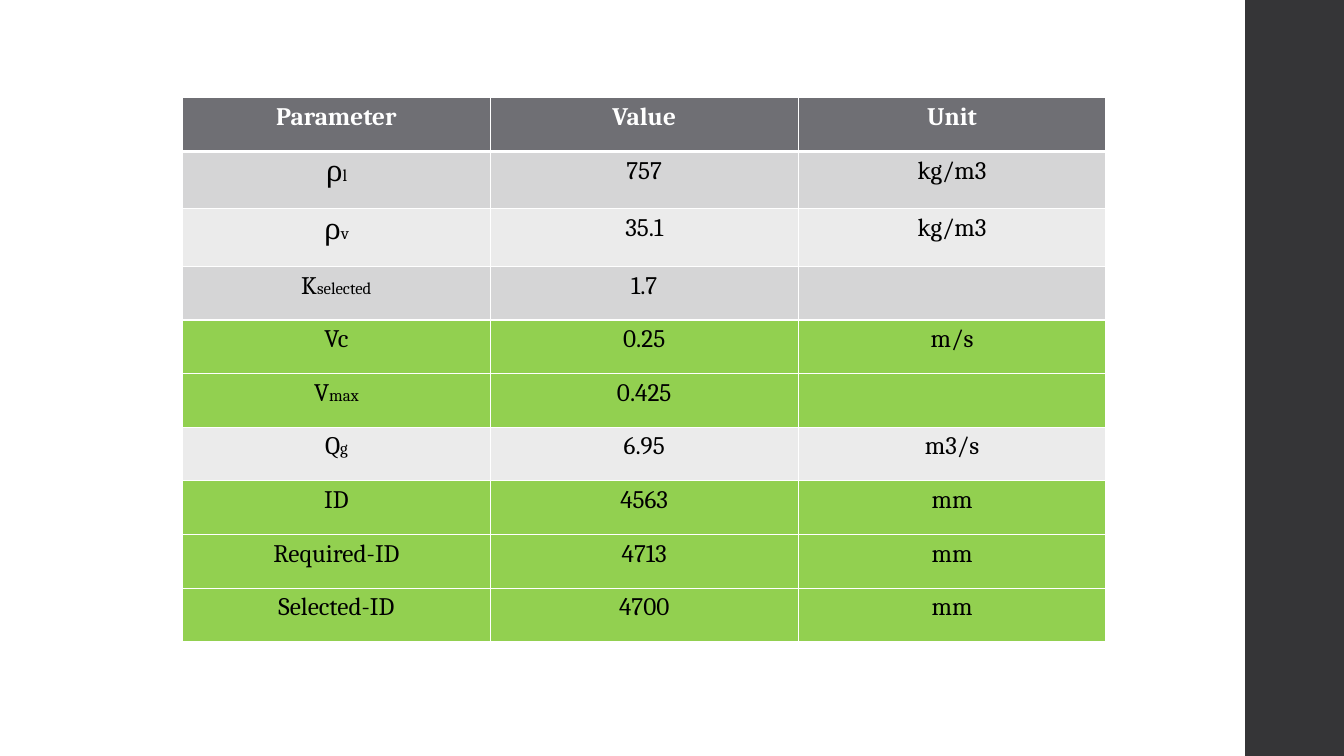
from lxml.etree import SubElement
from pptx import Presentation
from pptx.dml.color import RGBColor
from pptx.enum.shapes import MSO_SHAPE as Shape
from pptx.enum.text import PP_ALIGN as Align
from pptx.oxml.ns import qn
from pptx.util import Inches, Pt

WHITE = RGBColor(0xFF, 0xFF, 0xFF)
BLACK = RGBColor(0x00, 0x00, 0x00)
SIDEBAR = RGBColor(0x35, 0x35, 0x37)
HEADER = RGBColor(0x6F, 0x6F, 0x74)
BAND_DARK = RGBColor(0xD5, 0xD5, 0xD6)
BAND_LIGHT = RGBColor(0xEB, 0xEB, 0xEB)
GREEN = RGBColor(0x92, 0xD0, 0x50)

FONT = "Cambria"
TABLE_WIDTH, TABLE_HEIGHT = 9.16, 5.4
RHO_HEIGHT = 0.57

# Symbol, subscript, value, unit, fill
PARAMETERS = [
    ("ρ", "l", "757", "kg/m3", BAND_DARK),
    ("ρ", "v", "35.1", "kg/m3", BAND_LIGHT),
    ("K", "selected", "1.7", "", BAND_DARK),
    ("Vc", "", "0.25", "m/s", GREEN),
    ("V", "max", "0.425", "", GREEN),
    ("Q", "g", "6.95", "m3/s", BAND_LIGHT),
    ("ID", "", "4563", "mm", GREEN),
    ("Required-ID", "", "4713", "mm", GREEN),
    ("Selected-ID", "", "4700", "mm", GREEN),
]


def add_text(paragraph, text, size=18, color=BLACK, bold=False):
    paragraph.alignment = Align.CENTER
    if not text:
        return
    run = paragraph.add_run()
    run.text = text
    run.font.name = FONT
    run.font.size = Pt(size)
    run.font.bold = bold
    run.font.color.rgb = color


def style_cell(cell, fill, bottom=1, top=1):
    # Borders come before the fill in the cell properties
    properties = cell._tc.get_or_add_tcPr()
    for side, width in (("L", 1), ("R", 1), ("T", top), ("B", bottom)):
        border = SubElement(properties, qn(f"a:ln{side}"), w=str(Pt(width)))
        solid = SubElement(border, qn("a:solidFill"))
        SubElement(solid, qn("a:srgbClr"), val=str(WHITE))
    cell.fill.solid()
    cell.fill.fore_color.rgb = fill


def add_sidebar(slide):
    sidebar = slide.shapes.add_shape(
        Shape.RECTANGLE, Inches(12.35), 0, Inches(1), Inches(7.5))
    sidebar.shadow.inherit = False
    sidebar.fill.solid()
    sidebar.fill.fore_color.rgb = SIDEBAR
    sidebar.line.fill.background()


def add_parameter_table(slide):
    table = slide.shapes.add_table(
        len(PARAMETERS) + 1, 3, Inches(1.81), Inches(0.97),
        Inches(TABLE_WIDTH), Inches(TABLE_HEIGHT)).table
    for column in table.columns:
        column.width = Inches(TABLE_WIDTH / 3)

    # The rows with the larger ρ are taller; the others share the rest
    rho_rows = [i for i, row in enumerate(PARAMETERS, 1) if row[0] == "ρ"]
    plain_height = ((TABLE_HEIGHT - RHO_HEIGHT * len(rho_rows))
                    / (len(table.rows) - len(rho_rows)))
    for i, row in enumerate(table.rows):
        row.height = Inches(RHO_HEIGHT if i in rho_rows else plain_height)

    # Header
    for col, heading in enumerate(("Parameter", "Value", "Unit")):
        cell = table.cell(0, col)
        style_cell(cell, HEADER, bottom=3)
        add_text(cell.text_frame.paragraphs[0], heading, color=WHITE, bold=True)

    # Parameters
    for i, (symbol, subscript, value, unit, fill) in enumerate(PARAMETERS, 1):
        for col, text in enumerate((symbol, value, unit)):
            cell = table.cell(i, col)
            style_cell(cell, fill, top=3 if i == 1 else 1)
            paragraph = cell.text_frame.paragraphs[0]
            add_text(paragraph, text, size=20 if text == "ρ" else 18)
            if col == 0:
                add_text(paragraph, subscript, size=12)


def main():
    deck = Presentation()
    deck.slide_width = Inches(13.33)
    deck.slide_height = Inches(7.5)
    slide = deck.slides.add_slide(deck.slide_layouts[6])
    add_sidebar(slide)
    add_parameter_table(slide)
    deck.save("out.pptx")


if __name__ == "__main__":
    main()
